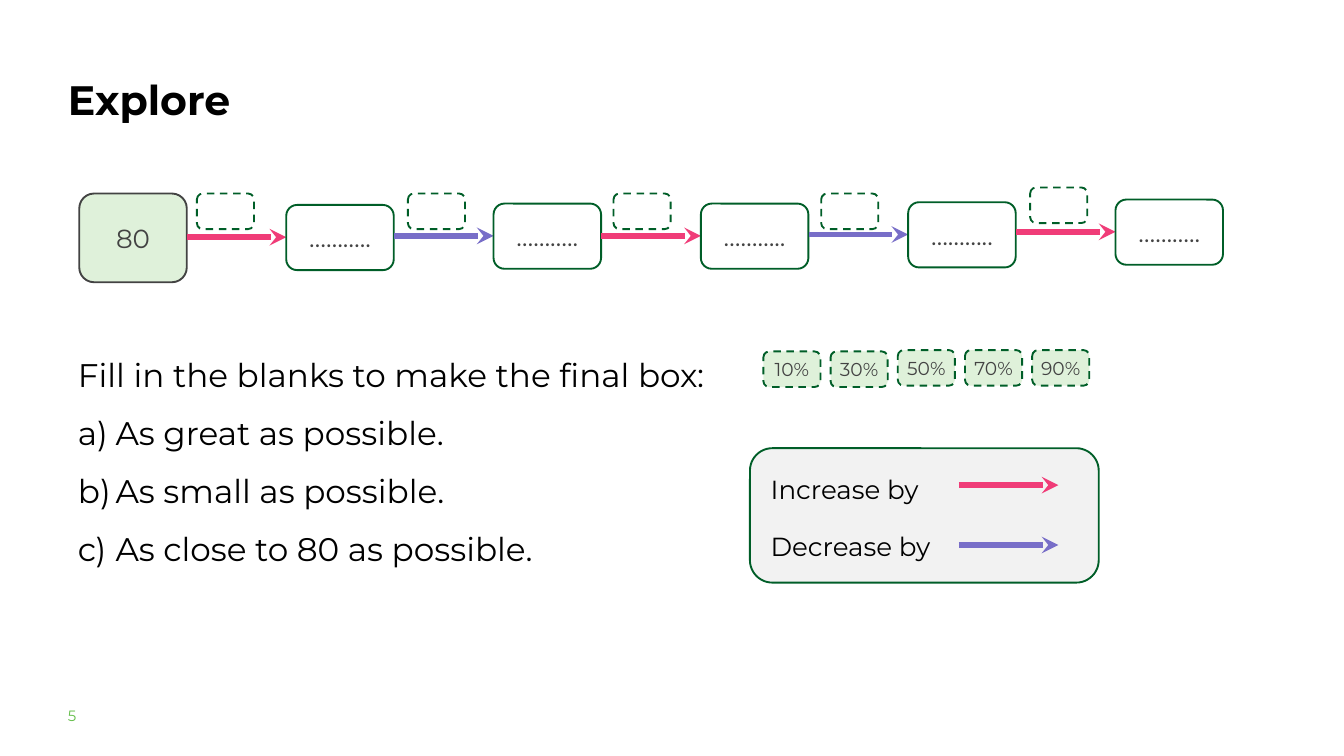
from lxml.etree import SubElement
from pptx import Presentation
from pptx.dml.color import RGBColor
from pptx.enum.dml import MSO_LINE_DASH_STYLE as Dash
from pptx.enum.shapes import MSO_CONNECTOR, MSO_SHAPE
from pptx.enum.text import MSO_ANCHOR as Anchor, MSO_AUTO_SIZE as AutoSize, PP_ALIGN as Align
from pptx.oxml.ns import qn
from pptx.util import Pt

EMU_PER_PX = 9144  # 100 px to the inch
FONT = "Montserrat"
BLACK, GREY, GREEN, LIME = "000000", "434343", "005E28", "65BE4B"
MINT, PANEL = "DFF1DA", "F2F2F2"
INCREASE, DECREASE = "F03C78", "786EC8"

BOX_STEP = 308.5
BOX_TOPS = [305, 303, 303, 301, 297]
BLANKS = [(293, 288), (607, 288), (913, 288), (1222, 288), (1533, 279)]
TILES = [("10%", 523), ("30%", 523), ("50%", 521), ("70%", 521), ("90%", 521)]
QUESTION = "Fill in the blanks to make the final box:"
GOALS = ["As great as possible.", "As small as possible.", "As close to 80 as possible."]


def px(length):
    return round(length * EMU_PER_PX)


def rgb(color):
    return RGBColor.from_string(color)


def apply(target, formats):
    for name, value in formats.items():
        setattr(target, name, value)


def place(shape, left, top, width, height):
    apply(shape, {"left": px(left), "top": px(top), "width": px(width), "height": px(height)})


def style(paragraph, size, color=BLACK, bold=False, **formats):
    apply(paragraph, formats)
    apply(paragraph.font, {"name": FONT, "size": Pt(size), "bold": bold})
    paragraph.font.color.rgb = rgb(color)


def set_frame(frame, anchor=Anchor.TOP):
    apply(frame, {"word_wrap": True, "auto_size": AutoSize.NONE, "vertical_anchor": anchor})


def add_label(slide, text, box, size, color=BLACK):
    label = slide.shapes.add_textbox(*map(px, box))
    set_frame(label.text_frame)
    label.text_frame.text = text
    style(label.text_frame.paragraphs[0], size, color, line_spacing=1.3)


def add_box(slide, box, text="", size=28, fill=None, line=GREEN, dashed=False):
    shape = slide.shapes.add_shape(MSO_SHAPE.ROUNDED_RECTANGLE, *map(px, box))
    shape.shadow.inherit = False
    if fill:
        shape.fill.solid()
        shape.fill.fore_color.rgb = rgb(fill)
    else:
        shape.fill.background()
    shape.line.color.rgb = rgb(line)
    shape.line.width = Pt(2)
    if dashed:
        shape.line.dash_style = Dash.DASH
    if text:
        set_frame(shape.text_frame, Anchor.MIDDLE)
        shape.text_frame.text = text
        style(shape.text_frame.paragraphs[0], size, GREY, alignment=Align.CENTER)


def add_tile(slide, left, top, text="", fill=None):
    """Add a small dashed box that holds a percentage."""
    add_box(slide, (left, top, 85, 53), text, 20, fill, dashed=True)


def add_arrow(slide, left, top, color):
    arrow = slide.shapes.add_connector(
        MSO_CONNECTOR.STRAIGHT, px(left), px(top), px(left + 148), px(top))
    arrow.line.color.rgb = rgb(color)
    arrow.line.width = Pt(6)
    SubElement(arrow.line._get_or_add_ln(), qn("a:tailEnd"), type="stealth")
    SubElement(arrow._element.spPr, qn("a:effectLst"))


def add_title(slide):
    title = slide.shapes.title
    place(title, 91, 84, 711, 98)
    set_frame(title.text_frame)
    title.text_frame.text = "Explore"
    style(title.text_frame.paragraphs[0], 44, bold=True, alignment=Align.LEFT, line_spacing=1.3)


def set_list_mark(paragraph, mark, indent=0, **attributes):
    properties = paragraph._p.get_or_add_pPr()
    properties.set("marL", str(px(indent)))
    properties.set("indent", str(-px(indent)))
    SubElement(properties, qn(mark), **attributes)


def add_questions(slide):
    body = slide.placeholders[1]
    place(body, 106, 523, 1700, 330)
    frame = body.text_frame
    set_frame(frame)
    frame.text = "\n".join([QUESTION] + GOALS)
    question, *goals = frame.paragraphs
    set_list_mark(question, "a:buNone")
    style(question, 35, space_before=Pt(0))
    for goal in goals:
        set_list_mark(goal, "a:buAutoNum", 56, type="alphaLcParenR")
        style(goal, 35, space_before=Pt(20))


def add_chain(slide):
    add_box(slide, (118, 288, 160, 132), "80", fill=MINT, line=GREY)
    for index, (top, blank) in enumerate(zip(BOX_TOPS, BLANKS)):
        left = 426 + index * BOX_STEP
        add_arrow(slide, left - 148, top + 48, DECREASE if index % 2 else INCREASE)
        add_box(slide, (left, top, 160, 97), "………..")
        add_tile(slide, *blank)


def add_key(slide):
    add_box(slide, (1116, 667, 519, 200), fill=PANEL)
    for text, color, text_top, arrow_top in [
            ("Increase by", INCREASE, 686, 722), ("Decrease by", DECREASE, 771, 811)]:
        add_label(slide, text, (1137, text_top, 433, 66), 28)
        add_arrow(slide, 1427, arrow_top, color)


def main():
    presentation = Presentation()
    apply(presentation, {"slide_width": px(2000), "slide_height": px(1125)})
    slide = presentation.slides.add_slide(presentation.slide_layouts[1])
    add_title(slide)
    add_chain(slide)
    add_questions(slide)
    for index, (text, top) in enumerate(TILES):
        add_tile(slide, 1136 + 100 * index, top, text, MINT)
    add_key(slide)
    add_label(slide, "5", (91, 1038, 89, 42), 16, LIME)
    presentation.save("out.pptx")


if __name__ == "__main__":
    main()
